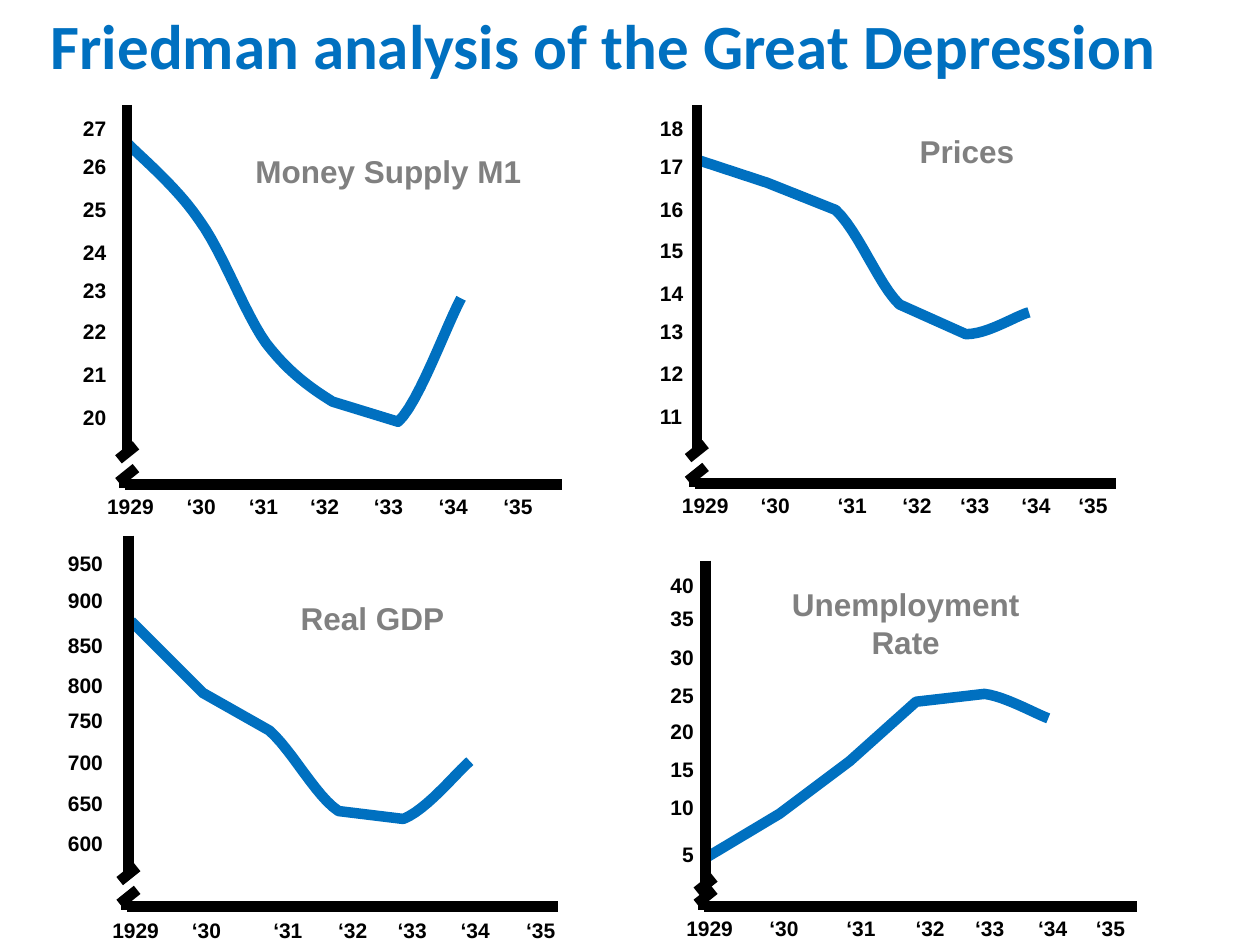
from lxml.etree import SubElement
from pptx import Presentation
from pptx.dml.color import RGBColor
from pptx.enum.shapes import MSO_CONNECTOR
from pptx.enum.text import MSO_ANCHOR, MSO_AUTO_SIZE, PP_ALIGN
from pptx.oxml.ns import qn
from pptx.util import Pt

COLORS = {"blue": "0070C0", "black": "000000", "gray": "808080"}
YEARS = ["1929", "‘30", "‘31", "‘32", "‘33", "‘34", "‘35"]
STEPS = 12

# Axis: x, top, base, right end, gap between base and upper part.
# Curve: a start, then lines (x, y) or Bézier parts (two controls and an end).
PANELS = [
    {
        "head": ("Money Supply M1", 108, 83.5, 228, 27),
        "axis": (72.7, 60, 277, 321, 19),
        "years": (278.6, [74.5, 115, 150.5, 185.5, 222, 259, 296]),
        "names": range(20, 28),
        "ticks": (40.3, [227.5, 203, 178.6, 154.8, 133.2, 108.7, 84.2, 62.6]),
        "curve": [(72.5, 81.5), (79, 88.5, 101, 106.5, 114, 126),
                  (127.5, 144.5, 139.5, 178.5, 152, 196),
                  (165, 213, 178, 222, 190, 229.5), (227.5, 241),
                  (239, 231, 255.5, 185, 263.5, 170.5)],
    },
    {
        "head": ("Prices", 474, 72, 157, 27),
        "axis": (398.2, 60, 276.3, 638, 19),
        "years": (278, [403, 443, 487, 524, 557, 592, 624.5]),
        "names": range(11, 19),
        "ticks": (370, [227, 202.5, 178.5, 156.5, 132.5, 108.5, 84.2, 62.6]),
        "curve": [(399, 91.5), (438.5, 104.5), (477.5, 120),
                  (490.5, 132, 502, 162.5, 514, 174), (552, 191),
                  (564.5, 191, 580.5, 180.5, 588, 178.5)],
    },
    {
        "head": ("Real GDP", 126, 339, 173.5, 27),
        "axis": (73.4, 306, 518, 319, 19),
        "years": (520.5, [77.5, 118, 164.5, 201.5, 235.5, 271.5, 309]),
        "names": range(600, 951, 50),
        "ticks": (31.7, [471, 448, 425, 401, 381, 358, 332, 311]),
        "curve": [(75, 355), (116, 396), (154, 417.5),
                  (167, 429, 180.5, 455, 193.5, 463.5), (230.5, 468),
                  (243.5, 463, 260.5, 442, 268.5, 435)],
    },
    {
        "head": ("Unemployment Rate", 432.5, 331, 170, 47),
        "axis": (403.2, 320.4, 518, 649.5, 13),
        "years": (519.5, [405.5, 448, 492, 531.5, 565.5, 601.5, 634.5]),
        "names": range(5, 41, 5),
        "ticks": (376, [477.5, 450.5, 428.5, 407, 386.5, 365, 342.5, 323.5]),
        "curve": [(404.5, 489.5), (445.5, 465), (485.5, 435), (523.5, 401),
                  (562.5, 396.5), (574.5, 398, 591, 407.5, 599, 410.5)],
    },
]


def trace(curve):
    """Turn lines and Bézier parts into one list of points."""
    dots = [curve[0]]
    for part in curve[1:]:
        if len(part) == 2:
            dots.append(part)
            continue
        ends = [dots[-1], part[:2], part[2:4], part[4:]]
        for step in range(1, STEPS + 1):
            t = step / STEPS
            u = 1 - t
            mix = (u ** 3, 3 * u * u * t, 3 * u * t * t, t ** 3)
            dots.append(tuple(sum(m * p[i] for m, p in zip(mix, ends))
                              for i in (0, 1)))
    return dots


class Deck:
    font = "Arial"
    width = 6

    def __init__(self, slide):
        self.slide = slide

    def style(self, frame, size, color, align, font=font):
        frame.word_wrap = True
        para = frame.paragraphs[0]
        para.alignment = align
        face = para.runs[0].font
        face.name, face.size, face.bold = font, Pt(size), True
        face.color.rgb = RGBColor.from_string(COLORS[color])

    def title(self, text, x, y, w, h):
        shape = self.slide.shapes.title
        shape.left, shape.top, shape.width, shape.height = map(Pt, (x, y, w, h))
        frame = shape.text_frame
        frame.text = text
        frame.auto_size = MSO_AUTO_SIZE.NONE
        frame.vertical_anchor = MSO_ANCHOR.TOP
        frame.margin_left = Pt(17)
        self.style(frame, 36, "blue", PP_ALIGN.LEFT, "Calibri")

    def text(self, home, text, x, y, w, h, size=12, color="black",
             align=PP_ALIGN.CENTER):
        frame = home.shapes.add_textbox(*map(Pt, (x, y, w, h))).text_frame
        frame.text = text
        self.style(frame, size, color, align)

    def stroke(self, line, color):
        line.color.rgb = RGBColor.from_string(COLORS[color])
        line.width = Pt(self.width)

    def line(self, home, *ends):
        shape = home.shapes.add_connector(MSO_CONNECTOR.STRAIGHT,
                                          *map(Pt, ends))
        self.stroke(shape.line, "black")
        SubElement(shape._element.spPr, qn("a:effectLst"))

    def curve(self, home, parts):
        first, *rest = [(Pt(x), Pt(y)) for x, y in trace(parts)]
        pen = home.shapes.build_freeform(*first)
        pen.add_line_segments(rest, close=False)
        shape = pen.convert_to_shape()
        shape.shadow.inherit = False
        shape.fill.background()
        self.stroke(shape.line, "blue")

    def axes(self, home, x, top, base, right, gap):
        """Draw both axes with the break in the upright one."""
        end = base - gap
        self.line(home, x - 1, base, right, base)
        self.line(home, x, top, x, end)
        for low in (end + 4.5, base - 1.5):
            self.line(home, x - 5, low, x + 5, low - 8)
        self.line(home, x - 1.5, base + 2, x - 1.5, base - 3.5)

    def panel(self, data):
        home = self.slide.shapes.add_group_shape()
        top, mids = data["years"]
        for year, mid in zip(YEARS, mids):
            wide = 48 if len(year) == 4 else 34
            self.text(home, year, mid - wide / 2, top, wide, 19)
        left, tops = data["ticks"]
        names = [str(name) for name in data["names"]]
        most = len(names[-1])
        for name, y in zip(names, tops):
            x = left + 6.7 * (most - len(name))
            self.text(home, name, x, y, 14 * most + 4, 19,
                      align=PP_ALIGN.LEFT)
        self.curve(home, data["curve"])
        self.axes(home, *data["axis"])
        self.text(self.slide, *data["head"], size=18, color="gray")


def main():
    prs = Presentation()
    prs.slide_width, prs.slide_height = Pt(720), Pt(540)
    deck = Deck(prs.slides.add_slide(prs.slide_layouts[5]))
    deck.title("Friedman analysis of the Great Depression", 12, 0, 690, 51)
    for data in PANELS:
        deck.panel(data)
    prs.save("out.pptx")


if __name__ == "__main__":
    main()
